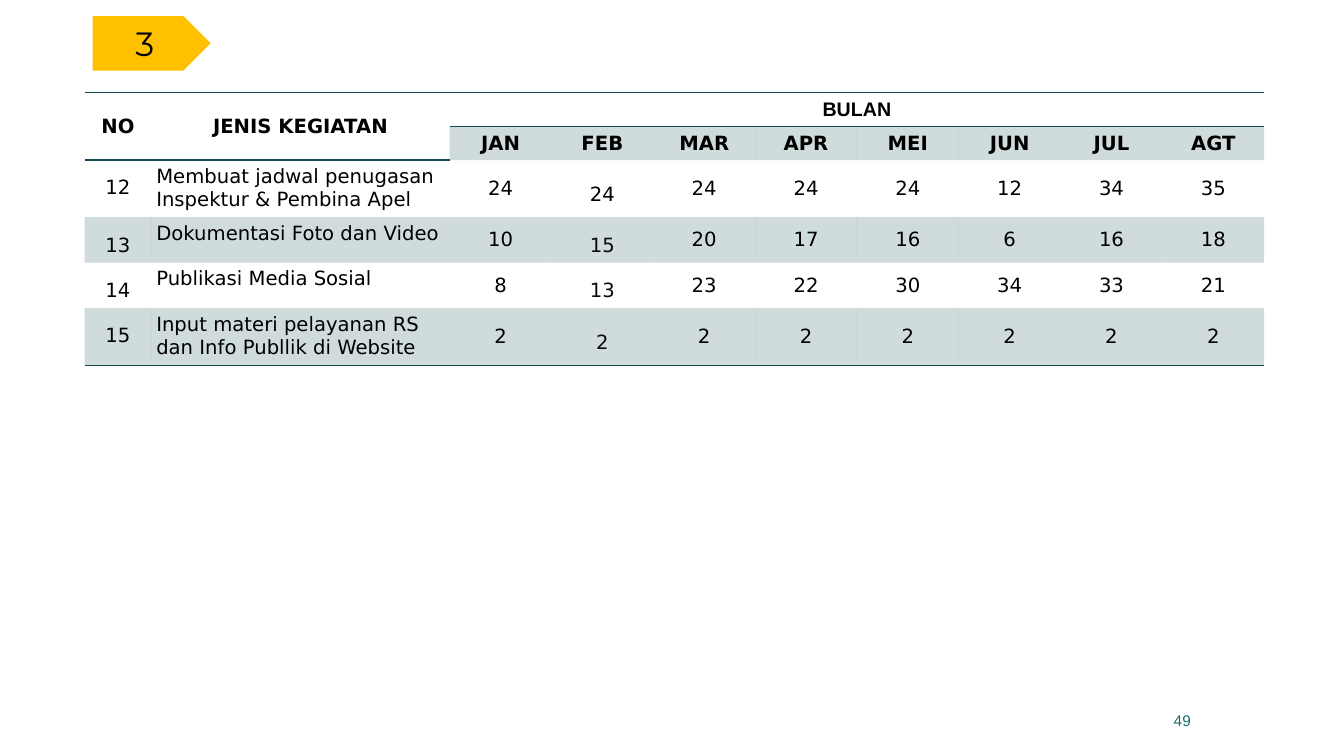
from pptx import Presentation
from pptx.dml.color import RGBColor
from pptx.enum.shapes import MSO_SHAPE
from pptx.enum.text import MSO_ANCHOR, PP_ALIGN
from pptx.oxml.ns import qn
from pptx.util import Inches, Pt
from lxml import etree

PLATE = MSO_SHAPE.PENTAGON
LEFT, MID, RIGHT = PP_ALIGN.LEFT, PP_ALIGN.CENTER, PP_ALIGN.RIGHT
TOP, CENTRE = MSO_ANCHOR.TOP, MSO_ANCHOR.MIDDLE

COLORS = {"teal": "164B4F", "page": "1F696F", "gold": "FFC000",
          "black": "000000", "soft": "0C0C0C"}
WIDE, HIGH = 13.33, 7.5
PLAIN = "{2D5ABB26-0587-4C30-8999-92F81FD0307C}"  # no style, no grid
PAD = Inches(0.05)

COLS = [0.66, 2.96] + [1.01] * 8
ROWS = [0.32, 0.33, 0.56, 0.45, 0.45, 0.56]
NO, TASK, JAN, FEB = range(4)
MONTHS = ["JAN", "FEB", "MAR", "APR", "MEI", "JUN", "JUL", "AGT"]
TASKS = [
    (12, "Membuat jadwal penugasan Inspektur & Pembina Apel",
     [24, 24, 24, 24, 24, 12, 34, 35]),
    (13, "Dokumentasi Foto dan Video", [10, 15, 20, 17, 16, 6, 16, 18]),
    (14, "Publikasi Media Sosial", [8, 13, 23, 22, 30, 34, 33, 21]),
    (15, "Input materi pelayanan RS dan Info Publlik di Website", [2] * 8),
]


def rgb(name):
    return RGBColor.from_string(COLORS[name])


def area(x, y, w, h):
    """Turn shares of the slide into lengths."""
    return [Inches(round(part * size, 2))
            for part, size in zip((x, y, w, h), (WIDE, HIGH) * 2)]


def write(frame, text, size, face, color="black", align=MID, bold=False):
    para = frame.paragraphs[0]
    para.text = str(text)
    para.alignment = align
    font = para.font
    font.size, font.name, font.bold = Pt(size), face, bold
    font.color.rgb = rgb(color)
    return para


def fill_cell(cell, text, align=MID, anchor=CENTRE, face="DejaVu Sans",
              color="black", bold=False, space=None):
    para = write(cell.text_frame, text, 14, face, color, align, bold)
    if space:
        para.line_spacing = space
    cell.vertical_anchor = anchor
    cell.margin_left = cell.margin_right = PAD
    cell.margin_top = cell.margin_bottom = PAD


def shade(cell):
    cell.fill.solid()
    cell.fill.fore_color.rgb = rgb("teal")
    tint = cell._tc.tcPr.find(".//" + qn("a:srgbClr"))
    etree.SubElement(tint, qn("a:alpha"), val="20000")


def rule(cell, *sides):
    """Draw thin lines on the sides given, top before bottom."""
    props = cell._tc.get_or_add_tcPr()
    for spot, side in enumerate(sides):
        line = etree.Element(qn("a:ln" + side), w=str(Pt(1)))
        paint = etree.SubElement(line, qn("a:solidFill"))
        etree.SubElement(paint, qn("a:srgbClr"), val=COLORS["teal"])
        props.insert(spot, line)


def add_grid(slide):
    box = area(0.063, 0.1227, 0.88, 0.356)
    frame = slide.shapes.add_table(len(ROWS), len(COLS), *box)
    table = frame.table
    table.first_row = table.horz_banding = False
    table._tbl.tblPr.find(qn("a:tableStyleId")).text = PLAIN
    for col, width in zip(table.columns, COLS):
        col.width = Inches(width)
    for row, height in zip(table.rows, ROWS):
        row.height = Inches(height)
    return table


def add_heads(table):
    cell = table.cell
    for col, text in ((NO, "NO"), (TASK, "JENIS KEGIATAN")):
        cell(0, col).merge(cell(1, col))
        fill_cell(cell(0, col), text, bold=True)
    cell(0, JAN).merge(cell(0, len(COLS) - 1))
    fill_cell(cell(0, JAN), "BULAN", face="Arial", bold=True)
    for col, month in enumerate(MONTHS, JAN):
        fill_cell(cell(1, col), month, bold=True)


def add_tasks(table):
    last = len(TASKS) - 1
    for index, (number, task, counts) in enumerate(TASKS):
        inner = 0 < index < last
        cells = table.rows[index + 2].cells
        fill_cell(cells[NO], number, anchor=TOP, space=1.5)
        fill_cell(cells[TASK], task, align=LEFT, anchor=TOP)
        for col, count in enumerate(counts, JAN):
            if col == FEB:
                fill_cell(cells[col], count, space=1.5,
                          anchor=TOP if inner else CENTRE,
                          color="soft" if index else "black")
            else:
                fill_cell(cells[col], count)


def paint_grid(table):
    for row in range(len(ROWS)):
        for col in range(len(COLS)):
            cell = table.cell(row, col)
            if row % 2 and (row > 1 or col >= JAN):
                shade(cell)
            if row == 0:
                rule(cell, "T", "B")
            elif row == len(ROWS) - 1 or (row == 1 and col < JAN):
                rule(cell, "B")


def add_badge(slide):
    badge = slide.shapes.add_shape(PLATE, *area(0.069, 0.0213, 0.088, 0.072))
    badge.shadow.inherit = False
    badge.fill.solid()
    badge.fill.fore_color.rgb = rgb("gold")
    badge.line.fill.background()
    badge.text_frame.vertical_anchor = CENTRE
    write(badge.text_frame, "3", 24, "Montserrat")


def add_page(slide):
    box = slide.shapes.add_textbox(*area(0.66, 0.9267, 0.2333, 0.0533))
    box.text_frame.word_wrap = True
    box.text_frame.vertical_anchor = CENTRE
    write(box.text_frame, "49", 11, "Arial", "page", RIGHT)


def main():
    deck = Presentation()
    deck.slide_width, deck.slide_height = Inches(WIDE), Inches(HIGH)
    slide = deck.slides.add_slide(deck.slide_layouts[6])
    # Page number
    add_page(slide)
    # Monthly activity table
    table = add_grid(slide)
    add_heads(table)
    add_tasks(table)
    paint_grid(table)
    # Section badge
    add_badge(slide)
    deck.save("out.pptx")


if __name__ == "__main__":
    main()
